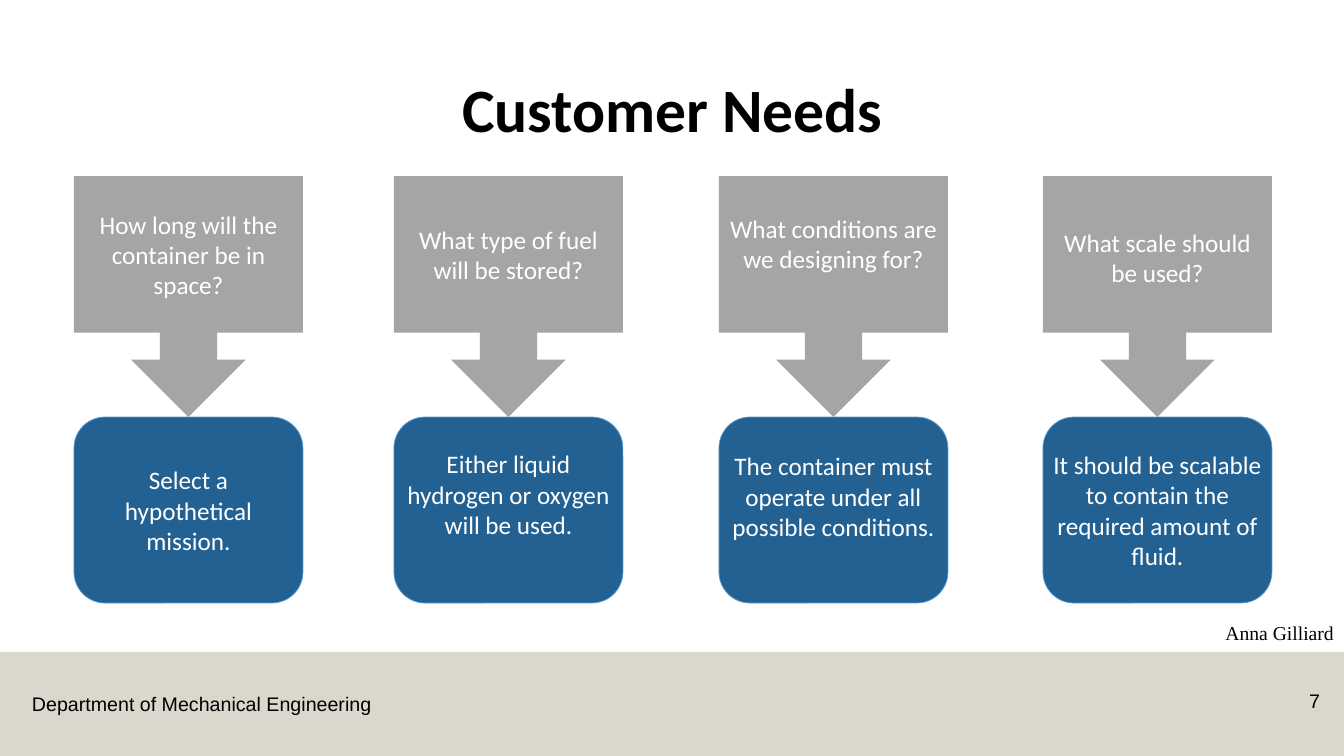
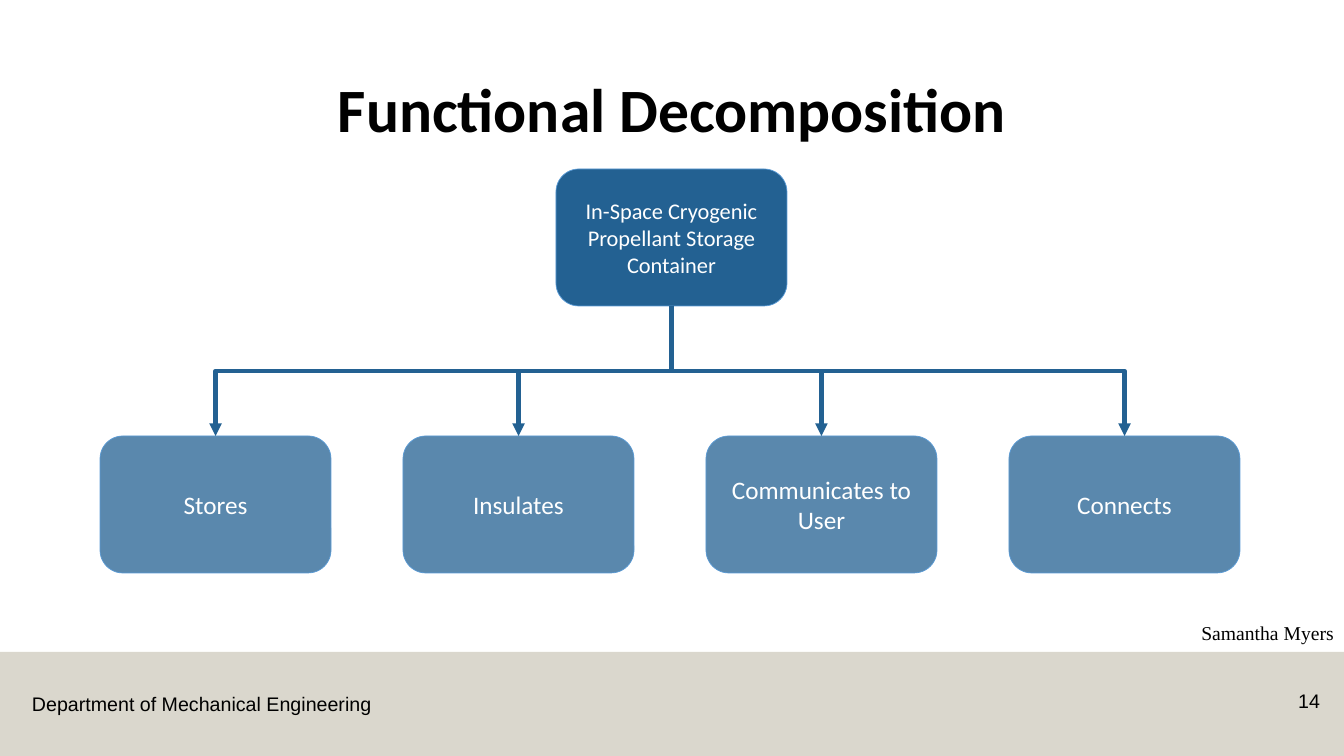
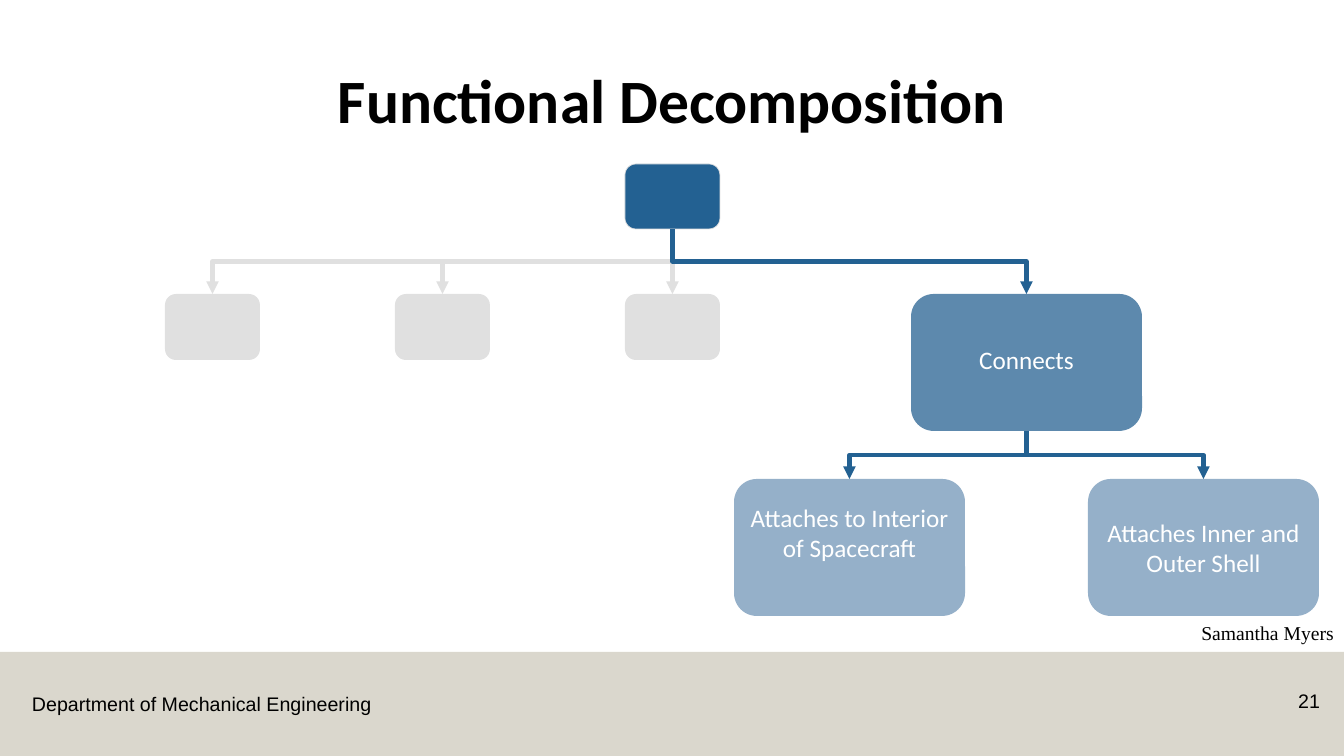
from dataclasses import dataclass

from lxml.etree import SubElement
from pptx import Presentation
from pptx.dml.color import RGBColor
from pptx.enum.shapes import MSO_CONNECTOR as Link, MSO_SHAPE as Kind
from pptx.enum.text import MSO_ANCHOR as Anchor, PP_ALIGN as Align
from pptx.oxml.ns import qn
from pptx.shapes.autoshape import Shape
from pptx.shapes.connector import Connector
from pptx.slide import Slide
from pptx.util import Pt

SCALE = 914400 / 100.8
BLACK = RGBColor(0x00, 0x00, 0x00)
WHITE = RGBColor(0xFF, 0xFF, 0xFF)
NAVY = RGBColor(0x23, 0x61, 0x92)
STEEL = RGBColor(0x5D, 0x89, 0xAD)
MIST = RGBColor(0x95, 0xB0, 0xC9)
EDGE = RGBColor(0x5B, 0x9B, 0xD5)
GRAY = RGBColor(0xA5, 0xA5, 0xA5)
PALE = RGBColor(0xE0, 0xE0, 0xE0)
SAND = RGBColor(0xB7, 0xB0, 0x9C)


@dataclass
class Box:
    x: int
    y: int
    w: int
    h: int


@dataclass
class Need:
    """A question and its answer, each with a vertical text shift."""
    x: int
    ask: str
    reply: str
    ask_dy: int = 0
    reply_dy: int = 0


NEEDS = [
    Need(74, "How long will the container be in space?",
         "Select a hypothetical mission."),
    Need(394, "What type of fuel will be stored?",
         "Either liquid hydrogen or oxygen will be used.", 0, -16),
    Need(719, "What conditions are we designing for?",
         "The container must operate under all possible conditions.", -11, -14),
    Need(1043, "What scale should be used?",
         "It should be scalable to contain the required amount of fluid.", 3),
]
TASKS = ["Stores", "Insulates", "Communicates to User", "Connects"]


def px(n: float) -> int:
    return round(n * SCALE)


def write(shape: Shape, text: str, *, size: int = 18, font: str = "Calibri",
          color: RGBColor = WHITE, bold: bool = False, align: Align = Align.CENTER,
          anchor: Anchor = Anchor.MIDDLE, space: float = 1.0, wrap: bool = True,
          pad: tuple[int, int] = (10, 5), dy: int = 0) -> None:
    """Put one paragraph in a shape; dy moves it down from the middle."""
    frame = shape.text_frame
    frame.word_wrap = wrap
    frame.vertical_anchor = anchor
    frame.margin_left = frame.margin_right = px(pad[0])
    frame.margin_top = px(pad[1] + max(2 * dy, 0))
    frame.margin_bottom = px(pad[1] + max(-2 * dy, 0))
    para = frame.paragraphs[0]
    para.alignment = align
    para.line_spacing = space
    run = para.add_run()
    run.text = text
    run.font.size = Pt(size)
    run.font.name = font
    run.font.bold = bold
    run.font.color.rgb = color


def label(slide: Slide, box: Box, text: str, **style) -> None:
    area = slide.shapes.add_textbox(px(box.x), px(box.y), px(box.w), px(box.h))
    write(area, text, color=BLACK, **style)


def draw(slide: Slide, kind: Kind, box: Box, fill: RGBColor, *,
         line: RGBColor | None = None, alpha: int = 100) -> Shape:
    shape = slide.shapes.add_shape(kind, px(box.x), px(box.y), px(box.w), px(box.h))
    shape.shadow.inherit = False
    shape.fill.solid()
    shape.fill.fore_color.rgb = fill
    if alpha < 100:
        tone = shape.fill._xPr.find(".//" + qn("a:srgbClr"))
        SubElement(tone, qn("a:alpha")).set("val", str(alpha * 1000))
    if line is None:
        shape.line.fill.background()
    else:
        shape.line.color.rgb = line
        shape.line.width = Pt(0.5)
    return shape


def node(slide: Slide, box: Box, fill: RGBColor, text: str = "", *,
         line: RGBColor | None = None, alpha: int = 100, **style) -> Shape:
    shape = draw(slide, Kind.ROUNDED_RECTANGLE, box, fill, line=line, alpha=alpha)
    if text:
        write(shape, text, **{"pad": (3, 0), **style})
    return shape


def arm(link: Connector, color: RGBColor) -> None:
    """Style a connector and give its end an arrowhead."""
    link.line.color.rgb = color
    link.line.width = Pt(3)
    props = link._element.spPr
    SubElement(props.find(qn("a:ln")), qn("a:tailEnd")).set("type", "triangle")
    SubElement(props, qn("a:effectLst"))


def join(slide: Slide, top: Shape, low: Shape, color: RGBColor = NAVY) -> None:
    """Lead an arrow from the foot of one node to the head of another."""
    x1, y1 = top.left + top.width // 2, top.top + top.height
    x2, y2 = low.left + low.width // 2, low.top
    if x1 == x2:
        link = slide.shapes.add_connector(Link.STRAIGHT, x1, y1, x2, y2)
        link.begin_connect(top, 2)
        link.end_connect(low, 0)
    else:
        # A vertical elbow is a horizontal one turned about its middle.
        mx, my = (x1 + x2) // 2, (y1 + y2) // 2
        rise, run = (y2 - y1) // 2, abs(x2 - x1) // 2
        side = 1 if x2 > x1 else -1
        link = slide.shapes.add_connector(
            Link.ELBOW, mx + side * rise, my - run, mx - side * rise, my + run)
        turn = 270 if side > 0 else 90
        link._element.spPr.find(qn("a:xfrm")).set("rot", str(turn * 60000))
    arm(link, color)


def start(deck: Presentation, title: str, author: str, page: int, top: int = 40) -> Slide:
    """Add a slide with the shared title, band and footer."""
    slide = deck.slides.add_slide(deck.slide_layouts[6])
    draw(slide, Kind.RECTANGLE, Box(0, 652, 1344, 104), SAND, alpha=50)
    foot = {"size": 14, "font": "Arial", "anchor": Anchor.TOP}
    label(slide, Box(22, 687, 362, 34), "Department of Mechanical Engineering",
          align=Align.LEFT, wrap=False, **foot)
    label(slide, Box(1252, 684, 78, 40), str(page), align=Align.RIGHT, **foot)
    label(slide, Box(93, top, 1159, 146), title, size=44, bold=True, space=0.9)
    label(slide, Box(1142, 619, 202, 34), author, size=14, font="Times New Roman",
          align=Align.RIGHT, anchor=Anchor.TOP, space=0.9)
    return slide


def needs(deck: Presentation) -> None:
    slide = start(deck, "Customer Needs", "Anna Gilliard", 7)
    for need in NEEDS:
        node(slide, Box(need.x, 417, 229, 186), NAVY, need.reply,
             line=EDGE, pad=(1, 0), dy=need.reply_dy)
        ask = draw(slide, Kind.DOWN_ARROW_CALLOUT, Box(need.x, 176, 229, 241), GRAY)
        write(ask, need.ask, pad=(9, 0), dy=need.ask_dy)


def tree(deck: Presentation) -> None:
    slide = start(deck, "Functional Decomposition", "Samantha Myers", 14)
    root = node(slide, Box(556, 169, 231, 137), NAVY,
                "In-Space Cryogenic Propellant Storage Container", line=EDGE, size=16)
    for i, task in enumerate(TASKS):
        leaf = node(slide, Box(100 + 303 * i, 436, 231, 137), NAVY, task,
                    line=EDGE, alpha=75)
        join(slide, root, leaf)


def branch(deck: Presentation) -> None:
    slide = start(deck, "Functional Decomposition", "Samantha Myers", 21, top=31)
    root = node(slide, Box(625, 164, 95, 65), NAVY, line=PALE)
    for i in range(3):
        join(slide, root, node(slide, Box(165 + 230 * i, 294, 95, 66), PALE), PALE)
    hub = node(slide, Box(911, 294, 231, 137), STEEL, TASKS[-1], dy=-3)
    join(slide, root, hub)
    for x, text, dy in [(734, "Attaches to Interior of Spacecraft", -15),
                        (1088, "Attaches Inner and Outer Shell", 0)]:
        join(slide, hub, node(slide, Box(x, 479, 231, 137), MIST, text, dy=dy))


def main() -> None:
    deck = Presentation()
    deck.slide_width, deck.slide_height = px(1344), px(756)
    needs(deck)
    tree(deck)
    branch(deck)
    deck.save("out.pptx")


if __name__ == "__main__":
    main()
